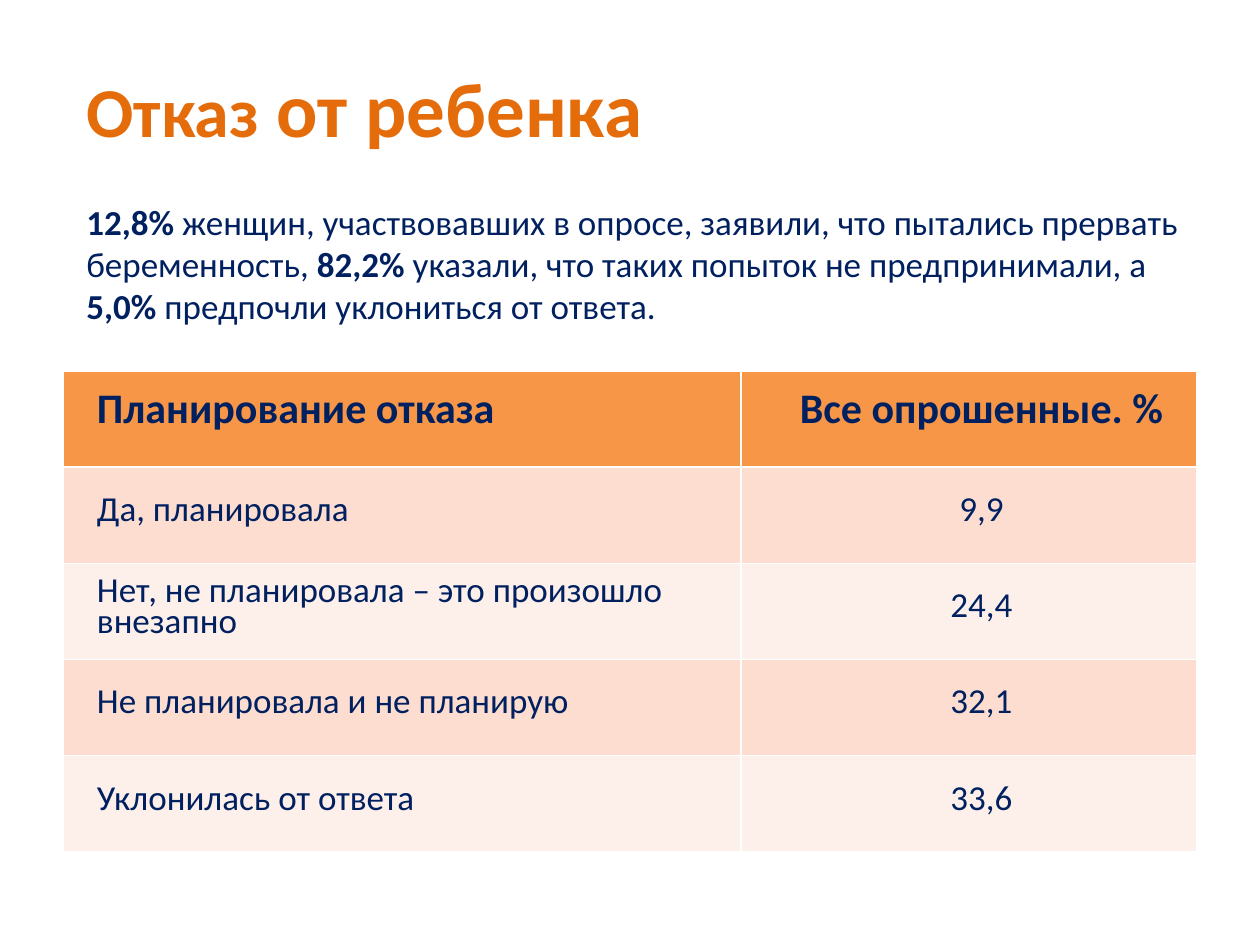
import pptx
import pptx.util
import pptx.dml.color
import pptx.enum.text
from dataclasses import dataclass

ALIGN = pptx.enum.text.PP_ALIGN
ANCHOR = pptx.enum.text.MSO_ANCHOR


@dataclass(frozen=True)
class Theme:
    font: str = "Calibri"
    title: str = "E46C0A"
    text: str = "002060"
    head: str = "F79646"
    bands: tuple = ("FCDDCF", "FDEFE9")
    small: int = 20
    label: int = 24
    large: int = 40
    huge: int = 44
    line: int = 18


THEME = Theme()


def px(count):
    return pptx.util.Emu(round(count * 914400 / 126))


def rgb(code):
    return pptx.dml.color.RGBColor.from_string(code)


def format_all(item, values):
    for name, value in values.items():
        setattr(item, name, value)


def place(shape, box):
    names = ("left", "top", "width", "height")
    format_all(shape, dict(zip(names, map(px, box))))


def add_run(para, text, size, color, bold):
    run = para.add_run()
    run.text = text
    format_all(run.font, {"name": THEME.font, "size": pptx.util.Pt(size), "bold": bold})
    run.font.color.rgb = rgb(color)


def add_title(slide, box, parts):
    title = slide.shapes.title
    place(title, box)
    format_all(title.text_frame, {"vertical_anchor": ANCHOR.MIDDLE, "word_wrap": True})
    para = title.text_frame.paragraphs[0]
    para.alignment = ALIGN.LEFT
    for text, size in parts:
        add_run(para, text, size, THEME.title, True)


def add_intro(slide, box, parts):
    frame = slide.shapes.add_textbox(*map(px, box)).text_frame
    format_all(frame, {"word_wrap": True})
    for text, bold in parts:
        add_run(frame.paragraphs[0], text, THEME.small, THEME.text, bold)


def fill_cell(cell, text, align, color, size, bold):
    format_all(cell, {
        "vertical_anchor": ANCHOR.MIDDLE,
        "margin_left": px(9),
        "margin_right": px(9),
        "margin_top": 0,
        "margin_bottom": 0,
    })
    cell.fill.solid()
    cell.fill.fore_color.rgb = rgb(color)
    para = cell.text_frame.paragraphs[0]
    format_all(para, {"alignment": align, "line_spacing": pptx.util.Pt(THEME.line)})
    props = para._p.get_or_add_pPr()
    props.set("marL", str(px(25)))
    props.set("indent", "0")
    add_run(para, text, size, THEME.text, bold)


def add_grid(slide, box, widths, rows):
    table = slide.shapes.add_table(len(rows), len(widths), *map(px, box)).table
    for col, width in zip(table.columns, widths):
        col.width = px(width)
    for i, row in enumerate(rows):
        table.rows[i].height = px(box[3] / len(rows))
        head = i == 0
        color = THEME.head if head else THEME.bands[(i - 1) % 2]
        size = THEME.label if head else THEME.small
        for j, (text, align) in enumerate(zip(row, (ALIGN.LEFT, ALIGN.CENTER))):
            fill_cell(table.cell(i, j), text, align, color, size, head)


def main():
    deck = pptx.Presentation()
    format_all(deck, {"slide_width": px(1260), "slide_height": px(945)})
    slide = deck.slides.add_slide(deck.slide_layouts.get_by_name("Title Only"))
    add_title(slide, (74, 53, 1074, 107), [
        ("Отказ", THEME.large),
        (" от ребенка", THEME.huge),
    ])
    add_grid(slide, (63, 371, 1134, 481), (678, 456), [
        ("Планирование отказа", "Все опрошенные. %"),
        ("Да, планировала", "9,9"),
        ("Нет, не планировала – это произошло внезапно", "24,4"),
        ("Не планировала и не планирую", "32,1"),
        ("Уклонилась от ответа", "33,6"),
    ])
    add_intro(slide, (74, 194, 1131, 140), [
        ("12,8%", True),
        (" женщин, участвовавших в опросе, заявили, что пытались прервать беременность, ", False),
        ("82,2%", True),
        (" указали, что таких попыток не предпринимали, а ", False),
        ("5,0%", True),
        (" предпочли уклониться от ответа.", False),
    ])
    deck.save("out.pptx")


if __name__ == "__main__":
    main()
